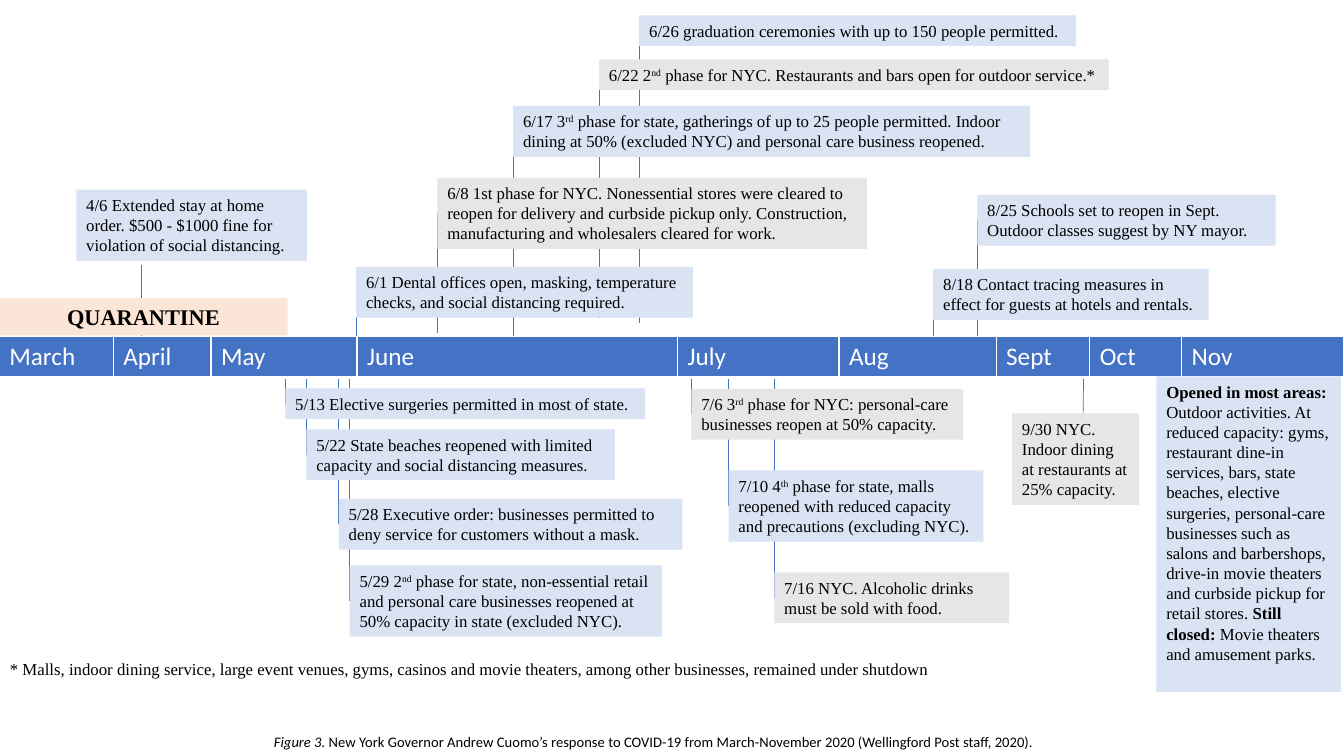
from lxml import etree
from pptx import Presentation
from pptx.dml.color import RGBColor
from pptx.enum.shapes import MSO_CONNECTOR
from pptx.enum.text import MSO_AUTO_SIZE, PP_ALIGN
from pptx.oxml.ns import qn
from pptx.util import Pt

STRAIGHT = MSO_CONNECTOR.STRAIGHT
GROW = MSO_AUTO_SIZE.SHAPE_TO_FIT_TEXT
LEFT, CENTER = PP_ALIGN.LEFT, PP_ALIGN.CENTER

BLUE = RGBColor(0x44, 0x72, 0xC4)
STATE = RGBColor(0xDA, 0xE3, 0xF3)
CITY = RGBColor(0xE7, 0xE6, 0xE6)
PEACH = RGBColor(0xFB, 0xE5, 0xD6)
BLACK = RGBColor(0, 0, 0)
WHITE = RGBColor(255, 255, 255)

MONTHS = [("March", 81.4), ("April", 69.8), ("May", 104.4), ("June", 229),
          ("July", 115.2), ("Aug", 112.3), ("Sept", 67), ("Oct", 65.5),
          ("Nov", 115.9)]

# Left, top, width, text lines, end of the line on the time bar, fill, text;
# words between ^ signs are raised
EVENTS = [
    (218.9, 306.7, 220.3, 2, 254.9, STATE,
     "5/22 State beaches reopened with limited capacity and social "
     "distancing measures."),
    (203.8, 277.4, 257, 1, 267.8, STATE,
     "5/13 Elective surgeries permitted in most of state."),
    (54.5, 135.5, 164.8, 3, None, STATE,
     "4/6 Extended stay at home order. $500 - $1000 fine for violation of "
     "social distancing."),
    (242, 356.3, 245.4, 2, 260.6, STATE,
     "5/28 Executive order: businesses permitted to deny service for "
     "customers without a mask."),
    (249.8, 403.8, 223.1, 3, 254.9, STATE,
     "5/29 2^nd^ phase for state, non-essential retail and personal care "
     "businesses reopened at 50% capacity in state (excluded NYC)."),
    (254.4, 190.6, 240.6, 2, 265, STATE,
     "6/1 Dental offices open, masking, temperature checks, and social "
     "distancing required."),
    (312.4, 127, 306.9, 3, 237.6, CITY,
     "6/8 1st phase for NYC. Nonessential stores were cleared to reopen for "
     "delivery and curbside pickup only. Construction, manufacturing and "
     "wholesalers cleared for work."),
    (427.9, 42.5, 364, 1, 227.5, CITY,
     "6/22 2^nd^ phase for NYC. Restaurants and bars open for outdoor "
     "service.*"),
    (366.5, 75.7, 369.2, 2, 242, STATE,
     "6/17 3^rd^ phase for state, gatherings of up to 25 people permitted. "
     "Indoor dining at 50% (excluded NYC) and personal care business "
     "reopened."),
    (456.6, 11, 311.9, 1, 230.4, STATE,
     "6/26 graduation ceremonies with up to 150 people permitted."),
    (493.9, 277.7, 194.2, 2, 259.9, CITY,
     "7/6 3^rd^ phase for NYC: personal-care businesses reopen at 50% "
     "capacity."),
    (520.4, 336, 182.1, 3, 265.7, STATE,
     "7/10 4^th^ phase for state, malls reopened with reduced capacity and "
     "precautions (excluding NYC)."),
    (553.1, 408.8, 167.7, 2, 261.4, CITY,
     "7/16 NYC. Alcoholic drinks must be sold with food."),
    (666.6, 192.2, 196.7, 2, 269.3, STATE,
     "8/18 Contact tracing measures in effect for guests at hotels and "
     "rentals."),
    (722.9, 295.3, 90.8, 4, None, CITY,
     "9/30 NYC. Indoor dining at restaurants at 25% capacity."),
    (698.1, 139.2, 213.2, 2, 259.9, STATE,
     "8/25 Schools set to reopen in Sept. Outdoor classes suggest by NY "
     "mayor."),
]


def tall(rows):
    """Height of a box holding this many lines of 12 point text."""
    return 7.27 + 14.54 * rows


def split(text):
    """Cut text into runs, raising the parts between ^ signs."""
    return [(part, "u" if i % 2 else "")
            for i, part in enumerate(text.split("^"))]


class Board:
    face, size = "Times New Roman", 12

    def __init__(self, slide):
        self.slide = slide

    def run(self, para, text, style="", size=None, face=None, color=BLACK):
        """Style letters: b bold, i italic, u raised."""
        run = para.add_run()
        run.text = text
        font = run.font
        font.name, font.size = face or self.face, Pt(size or self.size)
        font.bold, font.italic = "b" in style, "i" in style
        font.color.rgb = color
        if "u" in style:
            font._element.set("baseline", "30000")

    def box(self, x, y, w, h, runs, fill=None, align=LEFT, **look):
        box = self.slide.shapes.add_textbox(Pt(x), Pt(y), Pt(w), Pt(h))
        if fill is not None:
            box.fill.solid()
            box.fill.fore_color.rgb = fill
        frame = box.text_frame
        frame.word_wrap, frame.auto_size = True, GROW
        para = frame.paragraphs[0]
        para.alignment = align
        for text, style in runs:
            self.run(para, text, style, **look)
        return box

    def line(self, x1, y1, x2, y2):
        line = self.slide.shapes.add_connector(
            STRAIGHT, Pt(x1), Pt(y1), Pt(x2), Pt(y2))
        line.line.color.rgb, line.line.width = BLUE, Pt(0.5)
        etree.SubElement(line._element.spPr, qn("a:effectLst"))
        return line

    def bar(self, x, y, h, parts):
        wide = sum(w for _, w in parts)
        table = self.slide.shapes.add_table(
            1, len(parts), Pt(x), Pt(y), Pt(wide), Pt(h)).table
        table.horz_banding = False
        for i, (name, w) in enumerate(parts):
            table.columns[i].width = Pt(w)
            cell = table.cell(0, i)
            self.run(cell.text_frame.paragraphs[0], name, size=18,
                     face="Calibri", color=WHITE)
            for side, width in zip("LRTB", (1, 1, 1, 3)):
                self.edge(cell, side, width)
            cell.fill.solid()
            cell.fill.fore_color.rgb = BLUE

    def edge(self, cell, side, width):
        props = cell._tc.get_or_add_tcPr()
        edge = etree.SubElement(props, qn("a:ln" + side), w=str(Pt(width)))
        fill = etree.SubElement(edge, qn("a:solidFill"))
        etree.SubElement(fill, qn("a:srgbClr"), val=str(WHITE))


def main():
    deck = Presentation()
    deck.slide_width, deck.slide_height = Pt(960), Pt(540)
    board = Board(deck.slides.add_slide(deck.slide_layouts[6]))

    # Date lines, behind everything else
    board.line(773.3, 325.4, 774, 267.8)
    board.line(100.8, 189.4, 100.8, 240.5)
    lines = [end and board.line(x, y + tall(rows) / 2, x, end)
             for x, y, _, rows, end, _, _ in EVENTS]

    # Time bar
    board.bar(-0.5, 240.5, 29.2, MONTHS)

    # Event boxes, each joined to its line at the left side
    for line, (x, y, w, rows, _, fill, text) in zip(lines, EVENTS):
        box = board.box(x, y, w, tall(rows), split(text), fill)
        if line:
            line.begin_connect(box, 1)

    # Footnote, quarantine band and state in November
    board.box(0, 466.8, 960, tall(1), [
        ("* Malls, indoor dining service, large event venues, gyms, casinos "
         "and movie theaters, among other businesses, remained under "
         "shutdown", "")])
    board.box(-0.5, 213, 206, 26.6, [("QUARANTINE", "b")], PEACH, CENTER,
              size=16)
    board.box(826, 268.8, 131.9, tall(15), [
        ("Opened in most areas: ", "b"),
        ("Outdoor activities. At reduced capacity: gyms, restaurant dine-in "
         "services, bars, state beaches, elective surgeries, personal-care "
         "businesses such as salons and barbershops, drive-in movie theaters "
         "and curbside pickup for retail stores. ", ""),
        ("Still closed: ", "b"),
        ("Movie theaters and amusement parks.", "")], STATE)

    # Caption
    board.box(188.6, 517.7, 721.4, tall(1), [
        ("Figure 3. ", "iu"),
        ("New York Governor Andrew Cuomo’s response to COVID-19 from "
         "March-November 2020 (Wellingford Post staff, 2020).", "u")],
        size=18, face="Calibri")

    deck.save("out.pptx")


if __name__ == "__main__":
    main()
